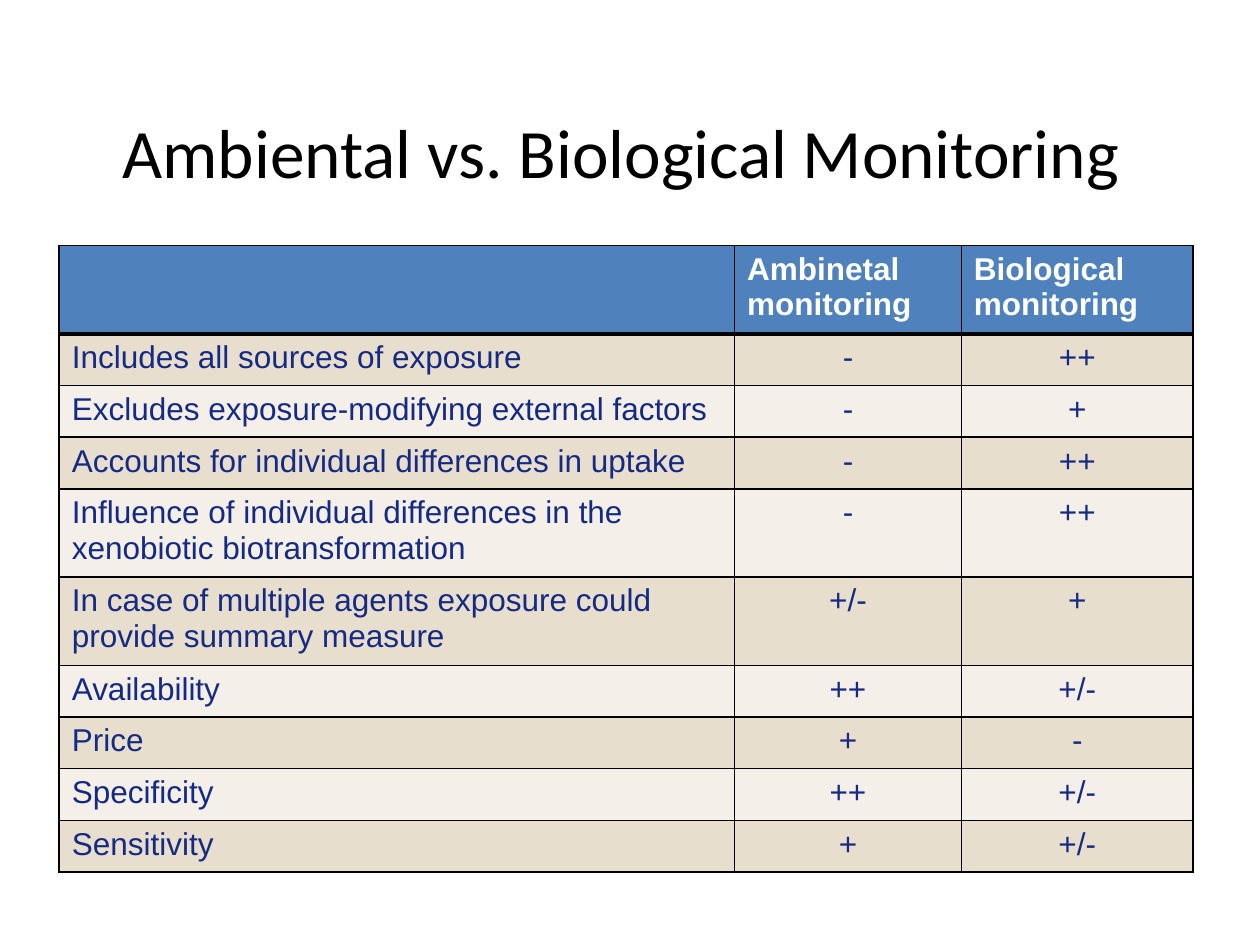
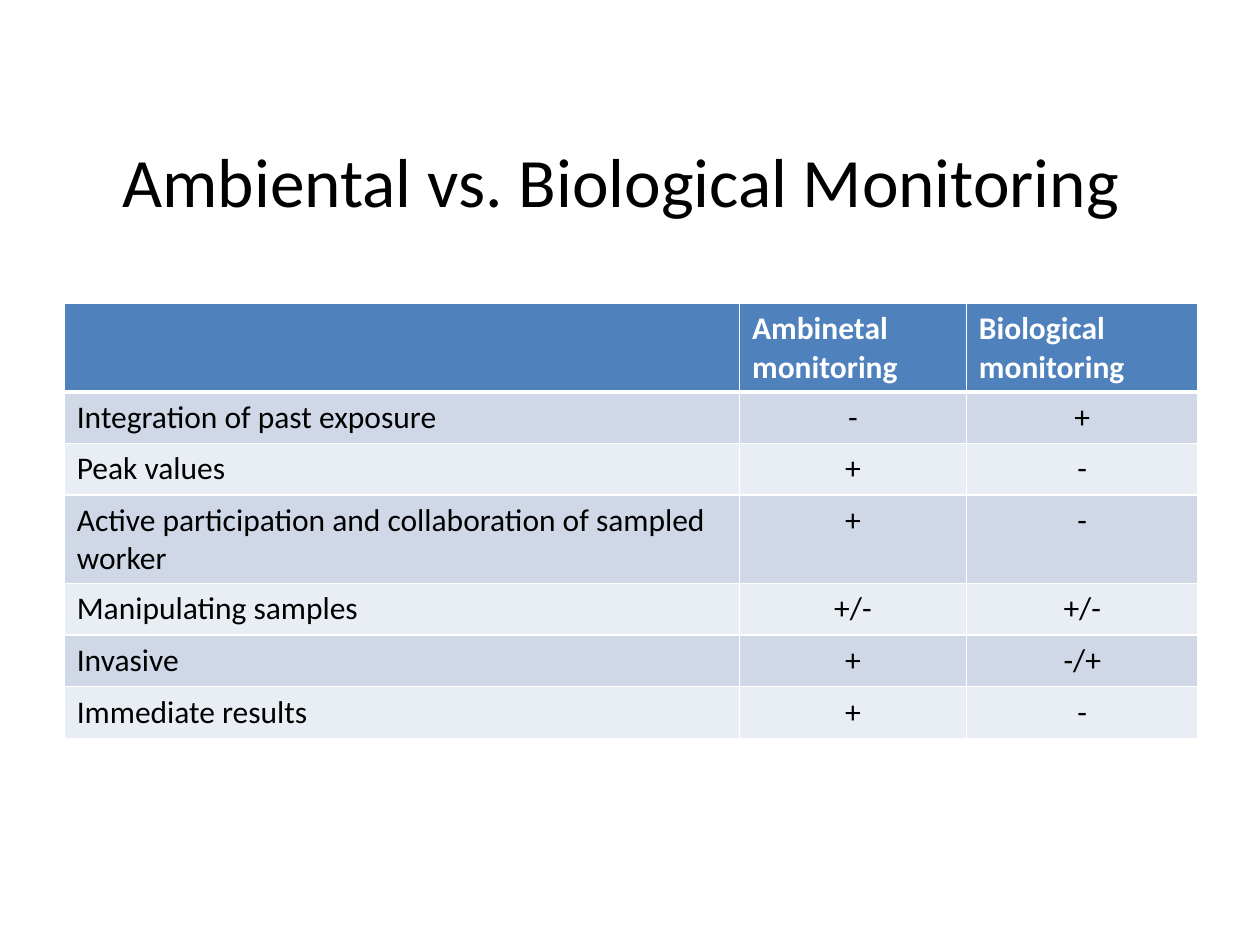
from dataclasses import dataclass

import pptx
import pptx.dml.color
import pptx.enum.text
import pptx.oxml.ns
import pptx.util
from lxml import etree
from pptx.util import Inches


@dataclass(frozen=True)
class TableStyle:
    font: str
    text: str
    border: str
    bands: tuple


@dataclass(frozen=True)
class Theme:
    title_font: str = "Calibri"
    title_size: float = 39.6
    title_color: str = "000000"
    table_size: float = 18
    header_fill: str = "4F81BD"
    header_text: str = "FFFFFF"
    thin: float = 1
    thick: float = 3
    warm: TableStyle = TableStyle("Arial", "152A83", "000000", ("E8DECD", "F4EFE8"))
    cool: TableStyle = TableStyle("Calibri", "000000", "FFFFFF", ("D0D8E8", "E9EDF4"))


THEME = Theme()
TITLE = "Ambiental vs. Biological Monitoring"
HEADER = ("", "Ambinetal monitoring", "Biological monitoring")
COLUMN_WIDTHS = (5.36, 1.8, 1.84)
ROW_HEIGHT = 0.41

EXPOSURE_CRITERIA = [
    ("Includes all sources of exposure", "-", "++"),
    ("Excludes exposure-modifying external factors", "-", "+"),
    ("Accounts for individual differences in uptake", "-", "++"),
    ("Influence of individual differences in the xenobiotic biotransformation", "-", "++"),
    ("In case of multiple agents exposure could provide summary measure", "+/-", "+"),
    ("Availability", "++", "+/-"),
    ("Price", "+", "-"),
    ("Specificity", "++", "+/-"),
    ("Sensitivity", "+", "+/-"),
]
SAMPLING_CRITERIA = [
    ("Integration of past exposure", "-", "+"),
    ("Peak values", "+", "-"),
    ("Active participation and collaboration of sampled worker", "+", "-"),
    ("Manipulating samples", "+/-", "+/-"),
    ("Invasive", "+", "-/+"),
    ("Immediate results", "+", "-"),
]


class Deck:
    def __init__(self, theme):
        self.theme = theme
        self.presentation = pptx.Presentation()
        self.presentation.slide_width = Inches(10)
        self.presentation.slide_height = Inches(7.5)
        self.slide = None

    def add_slide(self):
        self.slide = self.presentation.slides.add_slide(self.presentation.slide_layouts[6])

    def format_text(self, paragraph, font, size, color, bold=False, centered=False):
        align = pptx.enum.text.PP_ALIGN
        paragraph.alignment = align.CENTER if centered else align.LEFT
        for run in paragraph.runs:
            run.font.name = font
            run.font.size = pptx.util.Pt(size)
            run.font.bold = bold
            run.font.color.rgb = pptx.dml.color.RGBColor.from_string(color)

    def add_title(self, text, top):
        title = self.slide.shapes.add_textbox(
            Inches(0.43), Inches(top), Inches(9), Inches(0.87))
        frame = title.text_frame
        frame.word_wrap = True
        frame.vertical_anchor = pptx.enum.text.MSO_ANCHOR.MIDDLE
        frame.text = text
        self.format_text(frame.paragraphs[0], self.theme.title_font,
                         self.theme.title_size, self.theme.title_color, centered=True)

    def add_borders(self, cell, color, top, bottom):
        """Draw all four cell sides; call before the fill, which must follow them."""
        qn = pptx.oxml.ns.qn
        properties = cell._tc.get_or_add_tcPr()
        widths = {"L": self.theme.thin, "R": self.theme.thin, "T": top, "B": bottom}
        for side, width in widths.items():
            line = etree.SubElement(properties, qn(f"a:ln{side}"), w=str(pptx.util.Pt(width)))
            solid = etree.SubElement(line, qn("a:solidFill"))
            etree.SubElement(solid, qn("a:srgbClr"), val=color)

    def add_comparison(self, criteria, style, left, top):
        theme = self.theme
        rows = [HEADER, *criteria]
        table = self.slide.shapes.add_table(
            len(rows), len(HEADER), Inches(left), Inches(top),
            Inches(sum(COLUMN_WIDTHS)), Inches(ROW_HEIGHT * len(rows))).table
        for column, width in zip(table.columns, COLUMN_WIDTHS):
            column.width = Inches(width)
        for row_index, values in enumerate(rows):
            table.rows[row_index].height = Inches(ROW_HEIGHT)
            is_header = row_index == 0
            fill = theme.header_fill if is_header else style.bands[(row_index - 1) % 2]
            for column_index, value in enumerate(values):
                cell = table.cell(row_index, column_index)
                self.add_borders(cell, style.border,
                                 top=theme.thick if row_index == 1 else theme.thin,
                                 bottom=theme.thick if is_header else theme.thin)
                cell.fill.solid()
                cell.fill.fore_color.rgb = pptx.dml.color.RGBColor.from_string(fill)
                cell.text_frame.text = value
                self.format_text(cell.text_frame.paragraphs[0], style.font, theme.table_size,
                                 theme.header_text if is_header else style.text,
                                 bold=is_header,
                                 centered=not is_header and column_index > 0)


def main():
    deck = Deck(THEME)

    deck.add_slide()
    deck.add_title(TITLE, top=0.76)
    deck.add_comparison(EXPOSURE_CRITERIA, THEME.warm, left=0.47, top=1.95)

    deck.add_slide()
    deck.add_title(TITLE, top=0.99)
    deck.add_comparison(SAMPLING_CRITERIA, THEME.cool, left=0.51, top=2.41)

    deck.presentation.save("out.pptx")


if __name__ == "__main__":
    main()
